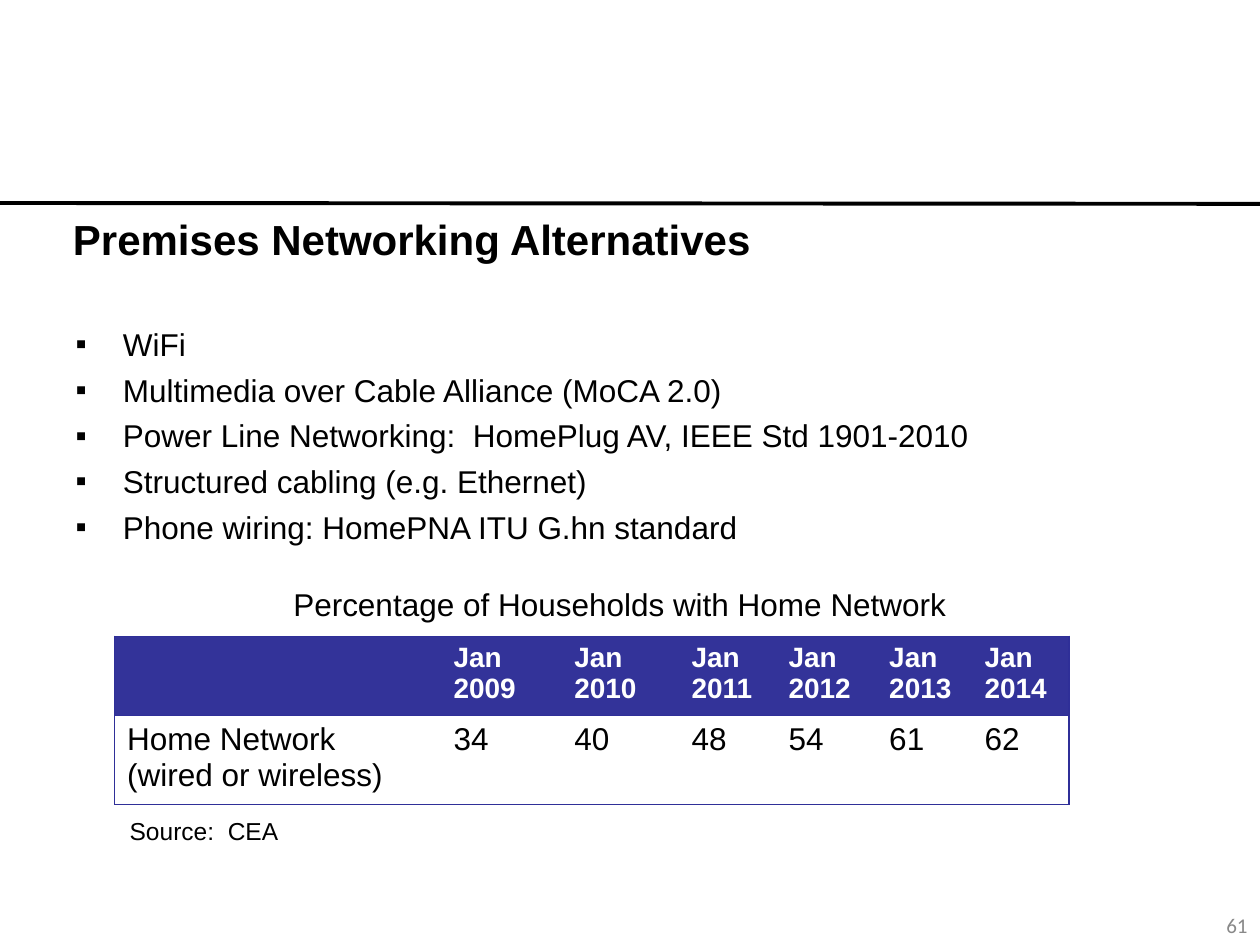
from lxml import etree
from pptx import Presentation
from pptx.dml.color import RGBColor
from pptx.enum import shapes, text
from pptx.oxml.ns import qn
from pptx.util import Pt

BLACK = RGBColor(0, 0, 0)
WHITE = RGBColor(255, 255, 255)
GREY = RGBColor(0x89, 0x89, 0x89)
NAVY = RGBColor(0x33, 0x33, 0x99)
EDGE = "2F2F98"

TOPICS = [
    "WiFi",
    "Multimedia over Cable Alliance (MoCA 2.0)",
    "Power Line Networking:  HomePlug AV, IEEE Std 1901-2010",
    "Structured cabling (e.g. Ethernet)",
    "Phone wiring: HomePNA ITU G.hn standard",
]
YEARS = range(2009, 2015)
SHARES = [34, 40, 48, 54, 61, 62]
COLS = [186.5, 69, 67, 55.5, 57.5, 54.5, 55.5]
ROWS = [42.5, 47.5]


def place(shape, x, y, w, h):
    shape.left, shape.top, shape.width, shape.height = map(Pt, (x, y, w, h))


def write(frame, lines, size=18, color=BLACK, bold=False, font="Arial",
          align=text.PP_ALIGN.LEFT, gap=0, bullet=None, indent=27):
    """Fill a text frame with one paragraph per line, all in one format."""
    for i, line in enumerate(lines):
        para = frame.paragraphs[0] if i == 0 else frame.add_paragraph()
        para.text = line
        para.alignment = align
        para.space_before = Pt(gap if i else 0)
        if bullet:
            props = para._p.get_or_add_pPr()
            props.set("marL", str(Pt(indent)))
            props.set("indent", str(-Pt(indent)))
            etree.SubElement(props, qn("a:buFont")).set("typeface", "Arial")
            etree.SubElement(props, qn("a:buChar")).set("char", bullet)
        face = para.runs[0].font
        face.name, face.size, face.bold = font, Pt(size), bold
        face.color.rgb = color


def add_label(slide, line, x, y, w, h, wrap=False,
              anchor=text.MSO_ANCHOR.TOP, **style):
    box = slide.shapes.add_textbox(Pt(x), Pt(y), Pt(w), Pt(h))
    box.text_frame.word_wrap = wrap
    box.text_frame.vertical_anchor = anchor
    write(box.text_frame, [line], **style)


def add_rule(slide, x1, y1, x2, y2):
    rule = slide.shapes.add_connector(
        shapes.MSO_CONNECTOR.STRAIGHT, Pt(x1), Pt(y1), Pt(x2), Pt(y2))
    rule.line.color.rgb = BLACK
    rule.line.width = Pt(2.25)
    etree.SubElement(rule._element.spPr, qn("a:effectLst"))


def set_edges(cell, drawn):
    """Draw the cell sides named in drawn (from L, R, T, B); clear the rest."""
    props = cell._tc.get_or_add_tcPr()
    for side in "LRTB":
        line = etree.SubElement(props, qn("a:ln" + side), w=str(Pt(0.75)))
        if side in drawn:
            fill = etree.SubElement(line, qn("a:solidFill"))
            etree.SubElement(fill, qn("a:srgbClr"), val=EDGE)
        else:
            etree.SubElement(line, qn("a:noFill"))


def add_grid(slide, x, y):
    heads = [[]] + [[f"Jan {year}"] for year in YEARS]
    cells = [["Home Network", "(wired or wireless)"]]
    cells += [[str(share)] for share in SHARES]
    table = slide.shapes.add_table(
        2, len(COLS), Pt(x), Pt(y), Pt(sum(COLS)), Pt(sum(ROWS))).table
    table.first_row = table.horz_banding = False
    for col, width in zip(table.columns, COLS):
        col.width = Pt(width)
    for row, height in zip(table.rows, ROWS):
        row.height = Pt(height)
    for r, row in enumerate((heads, cells)):
        for c, lines in enumerate(row):
            cell = table.cell(r, c)
            left = "L" if c == 0 else ""
            right = "R" if c == len(COLS) - 1 else ""
            set_edges(cell, left + right + ("TB" if r else "T"))
            if r == 0:
                cell.fill.solid()
                cell.fill.fore_color.rgb = NAVY
                write(cell.text_frame, lines, size=16, color=WHITE, bold=True)
            else:
                cell.fill.background()
                write(cell.text_frame, lines)


def main():
    deck = Presentation()
    deck.slide_width, deck.slide_height = Pt(720), Pt(540)
    slide = deck.slides.add_slide(deck.slide_layouts[1])

    add_rule(slide, 0, 116, 720, 116.5)
    title, body = slide.placeholders
    place(title, 34.5, 91.5, 648, 90)
    title.text_frame.vertical_anchor = text.MSO_ANCHOR.MIDDLE
    write(title.text_frame, ["Premises Networking Alternatives"],
          size=24, bold=True)
    place(body, 36, 182, 648, 312.5)
    write(body.text_frame, TOPICS, gap=4.5, bullet="▪")

    add_label(slide, "61", 552, 517, 168, 23, wrap=True, size=12, color=GREY,
              font="Calibri", align=text.PP_ALIGN.RIGHT,
              anchor=text.MSO_ANCHOR.MIDDLE)
    add_grid(slide, 65.5, 363.5)
    add_label(slide, "Source:  CEA", 67, 463, 99.5, 24.5, size=14)
    add_label(slide, "Percentage of Households with Home Network",
              160.5, 331, 391.5, 29)
    deck.save("out.pptx")


if __name__ == "__main__":
    main()
